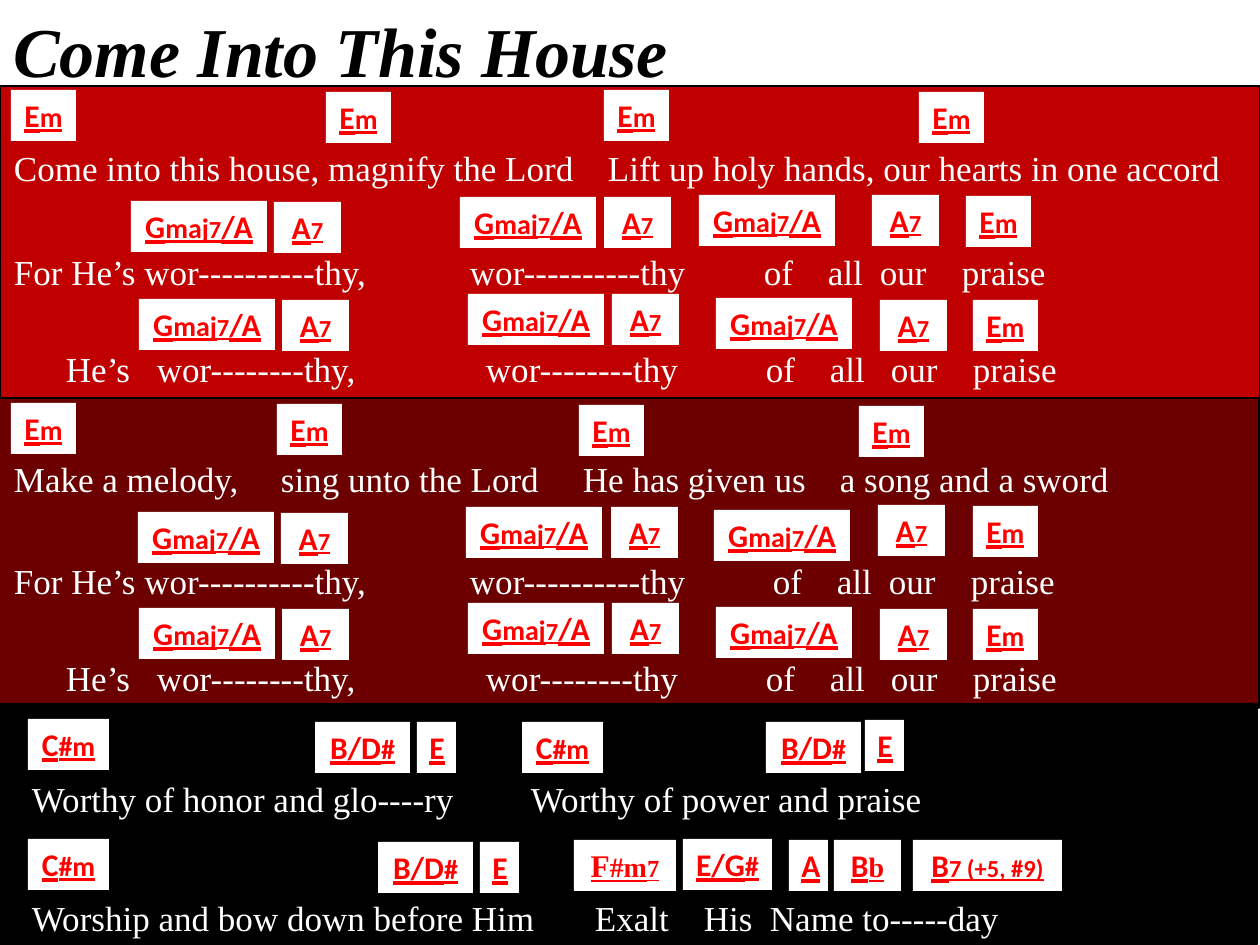
from dataclasses import dataclass

from lxml.etree import SubElement
from pptx import Presentation
from pptx.dml.color import RGBColor
from pptx.enum.shapes import MSO_SHAPE as Preset
from pptx.enum.text import MSO_ANCHOR as Anchor, MSO_AUTO_SIZE as AutoSize, PP_ALIGN as Align
from pptx.oxml.ns import qn
from pptx.util import Inches, Pt

PX = Inches(1) // 126
SLIDE_W, SLIDE_H = 1260, 945
INSET = 13
LYRIC_H, CHORD_H = 55, 51


@dataclass(frozen=True)
class Theme:
    white: str = "FFFFFF"
    black: str = "000000"
    red: str = "C00000"
    maroon: str = "6C0000"
    chord: str = "FF0000"
    serif: str = "Times New Roman"
    sans: str = "Calibri"
    title_pt: int = 40
    lyric_pt: int = 20
    root_pt: int = 18
    quality_pt: int = 16
    number_pt: int = 14
    line_pt: float = 0.75


THEME = Theme()
ROOT, QUALITY, NUMBER = THEME.root_pt, THEME.quality_pt, THEME.number_pt
SANS, SERIF = THEME.sans, THEME.serif

# Chord name: width, then (text, size, font) for each part
CHORDS = {
    "Em": (65, [("E", ROOT, SANS), ("m", QUALITY, SANS)]),
    "A7": (67, [("A", ROOT, SANS), ("7", NUMBER, SANS)]),
    "Gmaj7/A": (136, [("G", ROOT, SANS), ("maj", QUALITY, SANS),
                      ("7", NUMBER, SANS), ("/A", ROOT, SANS)]),
    "C#m": (81, [("C", ROOT, SANS), ("#m", QUALITY, SANS)]),
    "B/D#": (95, [("B/D", ROOT, SANS), ("#", QUALITY, SANS)]),
    "E/G#": (89, [("E/G", ROOT, SANS), ("#", QUALITY, SANS)]),
    "E": (39, [("E", ROOT, SANS)]),
    "A": (39, [("A", ROOT, SANS)]),
    "Bb": (67, [("B", ROOT, SANS), ("b", QUALITY, SERIF)]),
    "F#m7": (102, [("F", ROOT, SERIF), ("#m", QUALITY, SERIF), ("7", NUMBER, SERIF)]),
    "B7 (+5, #9)": (149, [("B", ROOT, SANS), ("7 (+5, #9)", NUMBER, SANS)]),
}

# Chord order shared by every "worthy" line
WORTHY = ("Gmaj7/A", "A7", "Gmaj7/A", "A7", "Gmaj7/A", "A7", "Em")

# The answering line is the same in both verses: phrases and chord places
ANSWER = [(67, "He’s"), (158, "wor--------thy,"), (487, "wor--------thy"),
          (767, "of"), (831, "all"), (892, "our"), (974, "praise")]
ANSWER_CHORDS = [(139, 299), (282, 300), (468, 294), (612, 294),
                 (716, 298), (880, 300), (973, 300)]
VERSE_STEP = 309

# Each line: box left, box top, phrases (x, words), chords (name, (x, y))
SONG = [
    (1, 140,
     [(14, "Come into this house, magnify the Lord"),
      (608, "Lift up holy hands, our hearts in one accord")],
     [("Em", at) for at in [(11, 90), (326, 92), (604, 90), (919, 92)]]),
    (1, 244,
     [(14, "For He’s wor----------thy,"), (470, "wor----------thy"),
      (764, "of"), (828, "all"), (880, "our"), (962, "praise")],
     zip(WORTHY, [(131, 201), (274, 202), (460, 197), (604, 197),
                  (699, 195), (872, 195), (966, 196)])),
    (3, 341, ANSWER, zip(WORTHY, ANSWER_CHORDS)),
    (1, 451,
     [(14, "Make a melody,"), (281, "sing unto the Lord"),
      (583, "He has given us"), (840, "a song and a sword")],
     [("Em", at) for at in [(11, 403), (277, 404), (579, 405), (859, 406)]]),
    (1, 553,
     [(14, "For He’s wor----------thy,"), (470, "wor----------thy"),
      (773, "of"), (837, "all"), (889, "our"), (971, "praise")],
     zip(WORTHY, [(138, 512), (281, 513), (466, 507), (611, 507),
                  (714, 510), (878, 505), (973, 506)])),
    (3, 341 + VERSE_STEP, ANSWER,
     zip(WORTHY, [(x, y + VERSE_STEP) for x, y in ANSWER_CHORDS])),
    (4, 771,
     [(33, "Worthy of honor and glo----ry"), (532, "Worthy of power and praise")],
     [("C#m", (28, 719)), ("B/D#", (315, 722)), ("E", (417, 722)),
      ("C#m", (522, 722)), ("B/D#", (766, 722)), ("E", (865, 720))]),
    (4, 890,
     [(33, "Worship and bow down before Him"), (596, "Exalt"),
      (705, "His"), (771, "Name to-----day")],
     [("C#m", (28, 839)), ("B/D#", (378, 842)), ("E", (480, 842)),
      ("F#m7", (574, 840)), ("E/G#", (683, 839)), ("A", (789, 840)),
      ("Bb", (834, 840)), ("B7 (+5, #9)", (913, 840))]),
]


def set_all(target, values):
    for name, value in values.items():
        setattr(target, name, value)


def place(*lengths):
    return [length * PX for length in lengths]


def add_block(slide, box, fill, outlined=False):
    block = slide.shapes.add_shape(Preset.RECTANGLE, *place(*box))
    block.shadow.inherit = False
    block.fill.solid()
    block.fill.fore_color.rgb = RGBColor.from_string(fill)
    if outlined:
        block.line.color.rgb = RGBColor.from_string(THEME.black)
        block.line.width = Pt(THEME.line_pt)
    else:
        block.line.fill.background()
    return block


def start_text(holder, align):
    frame = holder.text_frame
    set_all(frame, {"word_wrap": True, "auto_size": AutoSize.SHAPE_TO_FIT_TEXT,
                    "vertical_anchor": Anchor.TOP})
    frame.paragraphs[0].alignment = align
    return frame


def add_words(paragraph, words, size, font, color, **style):
    run = paragraph.add_run()
    run.text = words
    set_all(run.font, {"size": Pt(size), "name": font, **style})
    run.font.color.rgb = RGBColor.from_string(color)


def add_title(slide, words):
    plate = add_block(slide, (1, 1, 959, 97), THEME.white)
    frame = start_text(plate, Align.LEFT)
    add_words(frame.paragraphs[0], words, THEME.title_pt, SERIF, THEME.black,
              bold=True, italic=True)


def add_lyric(slide, left, top, phrases):
    lyric = slide.shapes.add_textbox(*place(left, top, SLIDE_W, LYRIC_H))
    frame = start_text(lyric, Align.LEFT)
    start = phrases[0][0] - 1
    frame.margin_left = max(start - left, INSET) * PX
    frame.margin_right = 0
    paragraph = frame.paragraphs[0]
    add_words(paragraph, "\t".join(words for _, words in phrases),
              THEME.lyric_pt, SERIF, THEME.white)
    # One tab stop where each later phrase begins
    stops = SubElement(paragraph._p.get_or_add_pPr(), qn("a:tabLst"))
    for x, _ in phrases[1:]:
        SubElement(stops, qn("a:tab"), pos=str((x - 1 - start) * PX), algn="l")


def add_chord(slide, name, x, y):
    width, parts = CHORDS[name]
    label = add_block(slide, (x, y, width, CHORD_H), THEME.white)
    frame = start_text(label, Align.CENTER)
    for words, size, font in parts:
        add_words(frame.paragraphs[0], words, size, font, THEME.chord,
                  bold=True, underline=True)


def main():
    deck = Presentation()
    set_all(deck, {"slide_width": SLIDE_W * PX, "slide_height": SLIDE_H * PX})
    slide = deck.slides.add_slide(deck.slide_layouts[6])

    # Verse and chorus panels, with the title tucked under the first verse
    add_block(slide, (-1, 396, 1260, 312), THEME.maroon, outlined=True)
    add_title(slide, "Come Into This House")
    add_block(slide, (0, 86, 1260, 312), THEME.red, outlined=True)
    add_block(slide, (0, 704, 1257, 241), THEME.black, outlined=True)

    # Lyrics with their chords above
    for left, top, phrases, chords in SONG:
        add_lyric(slide, left, top, phrases)
        for name, (x, y) in chords:
            add_chord(slide, name, x, y)

    deck.save("out.pptx")


if __name__ == "__main__":
    main()
